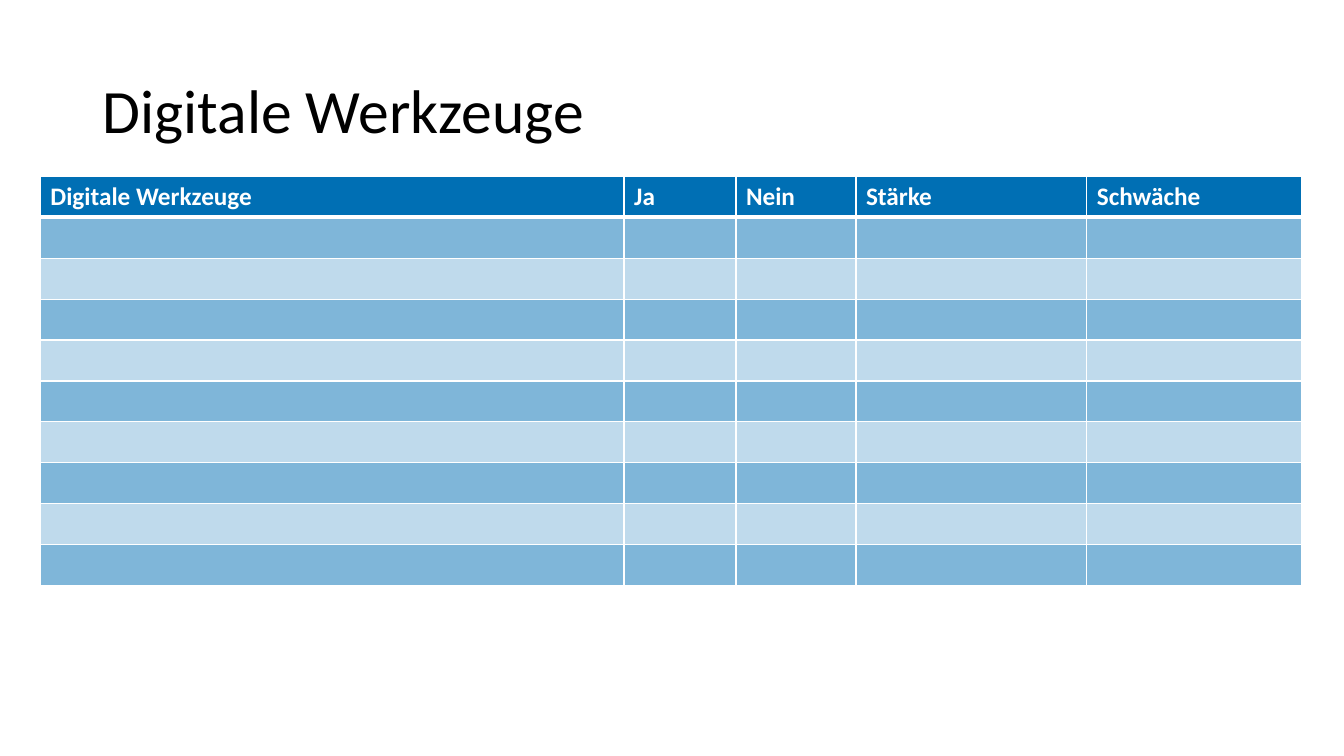
from lxml.etree import SubElement
from pptx import Presentation
from pptx.dml.color import RGBColor
from pptx.enum.text import MSO_ANCHOR, PP_ALIGN
from pptx.oxml.ns import qn
from pptx.util import Inches, Pt

BLUE = RGBColor(0x00, 0x6F, 0xB4)
WHITE = RGBColor(0xFF, 0xFF, 0xFF)
BLACK = RGBColor(0x00, 0x00, 0x00)

HEADINGS = ["Digitale Werkzeuge", "Ja", "Nein", "Stärke", "Schwäche"]
COLUMN_WIDTHS = [5.79, 1.11, 1.19, 2.29, 2.13]
EMPTY_ROWS = 9
ROW_HEIGHT = 0.406


class ToolsSlide:
    font_name = "Calibri"

    def __init__(self, presentation):
        self.slide = presentation.slides.add_slide(presentation.slide_layouts[5])

    def add_run(self, paragraph, text, size, color, bold=False):
        run = paragraph.add_run()
        run.text = text
        run.font.name = self.font_name
        run.font.size = Pt(size)
        run.font.bold = bold
        run.font.color.rgb = color

    def add_title(self, text):
        title = self.slide.shapes.title
        title.left, title.top = Inches(0.92), Inches(0.4)
        title.width, title.height = Inches(11.5), Inches(1.45)
        title.text_frame.vertical_anchor = MSO_ANCHOR.MIDDLE
        paragraph = title.text_frame.paragraphs[0]
        paragraph.alignment = PP_ALIGN.LEFT
        paragraph.line_spacing = 0.9
        self.add_run(paragraph, text, 44, BLACK)

    def fill_cell(self, cell, opacity):
        cell.fill.solid()
        cell.fill.fore_color.rgb = BLUE
        if opacity < 100:
            color = cell._tc.tcPr.find(".//" + qn("a:srgbClr"))
            SubElement(color, qn("a:alpha"), val=str(opacity * 1000))

    def border_cell(self, cell, top, bottom):
        properties = cell._tc.get_or_add_tcPr()
        widths = {"a:lnL": 1, "a:lnR": 1, "a:lnT": top, "a:lnB": bottom}
        for position, (side, width) in enumerate(widths.items()):
            line = SubElement(properties, qn(side), w=str(Pt(width)))
            fill = SubElement(line, qn("a:solidFill"))
            SubElement(fill, qn("a:srgbClr"), val=str(WHITE))
            properties.insert(position, line)

    def add_table(self, left, top, headings, widths, empty_rows, row_height):
        row_count = empty_rows + 1
        table = self.slide.shapes.add_table(
            row_count, len(headings), Inches(left), Inches(top),
            Inches(sum(widths)), Inches(row_height * row_count),
        ).table
        table.horz_banding = False
        for column, width in zip(table.columns, widths):
            column.width = Inches(width)
        for index, row in enumerate(table.rows):
            row.height = Inches(row_height)
            opacity = 100 if index == 0 else 50 if index % 2 else 25
            for cell in row.cells:
                self.fill_cell(cell, opacity)
                self.border_cell(cell, 3 if index == 1 else 1, 3 if index == 0 else 1)
                cell.text_frame.paragraphs[0].font.size = Pt(18)
        for cell, heading in zip(table.rows[0].cells, headings):
            self.add_run(cell.text_frame.paragraphs[0], heading, 18, WHITE, bold=True)


def main():
    presentation = Presentation()
    presentation.slide_width = Inches(13.33)
    presentation.slide_height = Inches(7.5)
    tools = ToolsSlide(presentation)
    tools.add_title("Digitale Werkzeuge")
    tools.add_table(0.4, 1.75, HEADINGS, COLUMN_WIDTHS, EMPTY_ROWS, ROW_HEIGHT)
    presentation.save("out.pptx")


if __name__ == "__main__":
    main()
